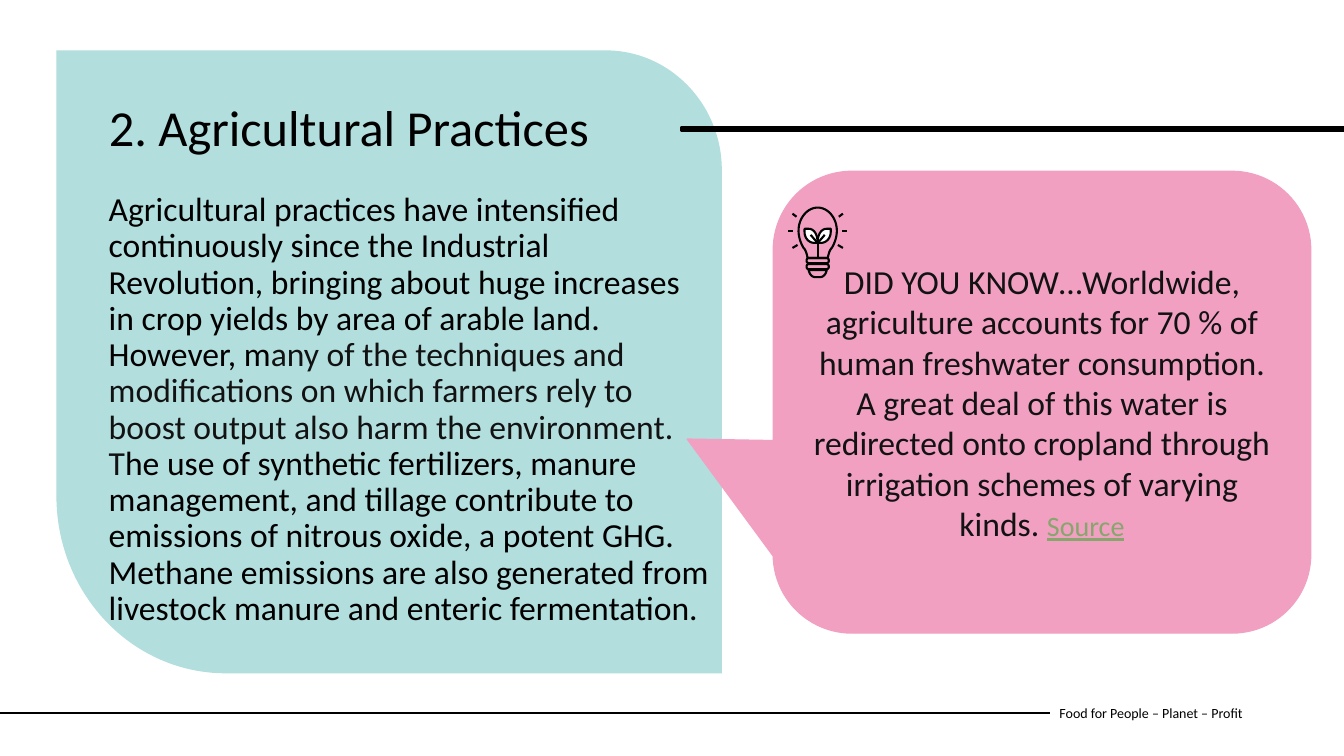
from pptx import Presentation
from pptx.dml.color import RGBColor
from pptx.enum.shapes import MSO_CONNECTOR, MSO_SHAPE
from pptx.enum.text import MSO_ANCHOR, MSO_AUTO_SIZE, PP_ALIGN
from pptx.oxml.ns import qn
from pptx.util import Inches, Pt
from lxml.etree import SubElement

BLACK = RGBColor(0x00, 0x00, 0x00)
INK = RGBColor(0x12, 0x12, 0x12)
WHITE = RGBColor(0xFF, 0xFF, 0xFF)
TEAL = RGBColor(0xB2, 0xDE, 0xDD)
PINK = RGBColor(0xF1, 0xA0, 0xC2)
GREEN = RGBColor(0x87, 0xA6, 0x6E)

BULB_AXIS = 8.11
STROKE = 1.5


def curve(start, first, second, end, steps=16):
    """Points along a cubic Bezier curve, both ends included."""
    points = []
    for step in range(steps + 1):
        t = step / steps
        weights = ((1 - t) ** 3, 3 * t * (1 - t) ** 2, 3 * t * t * (1 - t), t ** 3)
        corners = (start, first, second, end)
        points.append(tuple(sum(w * c[axis] for w, c in zip(weights, corners))
                            for axis in (0, 1)))
    return points


def mirror(points):
    """The points reflected in the bulb's axis, in reverse order."""
    return [(2 * BULB_AXIS - x, y) for x, y in reversed(points)]


class SlideBuilder:
    font = "Calibri"

    def __init__(self, deck):
        self.page = deck.slides.add_slide(deck.slide_layouts[5])

    def paint(self, shape, fill=None, line=None, width=1):
        shape.shadow.inherit = False
        if fill is None:
            shape.fill.background()
        else:
            shape.fill.solid()
            shape.fill.fore_color.rgb = fill
        if line is None:
            shape.line.fill.background()
        else:
            shape.line.color.rgb = line
            shape.line.width = Pt(width)
        return shape

    def set_text(self, shape, runs, frame_format=None, para_format=None):
        """Fill a shape with one paragraph of (text, size, colour, underline) runs."""
        frame = shape.text_frame
        para = frame.paragraphs[0]
        frame_values = {"word_wrap": True, "auto_size": MSO_AUTO_SIZE.NONE,
                        "vertical_anchor": MSO_ANCHOR.TOP, **(frame_format or {})}
        para_values = {"alignment": PP_ALIGN.LEFT, **(para_format or {})}
        for target, values in ((frame, frame_values), (para, para_values)):
            for name, value in values.items():
                setattr(target, name, value)
        for text, size, colour, underline in runs:
            span = para.add_run()
            span.text = text
            font_values = {"name": self.font, "size": Pt(size), "underline": underline}
            for name, value in font_values.items():
                setattr(span.font, name, value)
            span.font.color.rgb = colour

    def title(self, place, text, size):
        title = self.page.shapes.title
        title.left, title.top, title.width, title.height = map(Inches, place)
        self.page.shapes._spTree.append(title._element)
        self.set_text(title, [(text, size, BLACK, False)],
                      para_format={"line_spacing": 0.9})

    def text(self, place, runs, frame_format=None, para_format=None):
        box = self.page.shapes.add_textbox(*map(Inches, place))
        self.set_text(box, runs, frame_format, para_format)

    def shape(self, kind, place, adjustments=(), **style):
        shape = self.page.shapes.add_shape(kind, *map(Inches, place))
        for index, value in enumerate(adjustments):
            shape.adjustments[index] = value
        return self.paint(shape, **style)

    def outline(self, points, **style):
        corners = [(Inches(x), Inches(y)) for x, y in points]
        builder = self.page.shapes.build_freeform(*corners[0])
        builder.add_line_segments(corners[1:], close=True)
        return self.paint(builder.convert_to_shape(), **style)

    def line(self, start, end, width):
        line = self.page.shapes.add_connector(
            MSO_CONNECTOR.STRAIGHT, *map(Inches, (*start, *end)))
        line.line.color.rgb = BLACK
        line.line.width = Pt(width)
        SubElement(line._element.spPr, qn("a:effectLst"))


def draw_bulb(slide):
    glass = (curve((8.01, 2.56), (8, 2.51), (7.99, 2.48), (7.97, 2.46))
             + curve((7.97, 2.46), (7.94, 2.41), (7.92, 2.35), (7.92, 2.29))
             + curve((7.92, 2.29), (7.92, 2.16), (8.01, 2.06), (BULB_AXIS, 2.06)))
    slide.outline(glass + mirror(glass), line=BLACK, width=STROKE)

    foot = curve((8.02, 2.68), (8.03, 2.72), (8.05, 2.75), (8.09, 2.75))
    slide.outline(foot + mirror(foot), line=BLACK, width=STROKE)
    for top in (2.56, 2.62):
        slide.shape(MSO_SHAPE.ROUNDED_RECTANGLE, (8, top, 0.22, 0.05), [0.4],
                    line=BLACK, width=STROKE)

    slide.line((BULB_AXIS, 2.36), (BULB_AXIS, 2.56), STROKE)
    leaf = ([(7.98, 2.27), (8.02, 2.27)]
            + curve((8.02, 2.27), (8.07, 2.27), (8.11, 2.32), (8.11, 2.41))
            + curve((8.08, 2.41), (8.02, 2.41), (7.98, 2.36), (7.98, 2.3)))
    vein = [(8.04, 2.33), (8.1, 2.4)]
    rays = [[(7.82, 2.29), (7.87, 2.29)],
            [(7.86, 2.46), (7.91, 2.43)],
            [(7.86, 2.12), (7.9, 2.15)]]
    for side in (list, mirror):
        slide.outline(side(leaf), fill=WHITE, line=BLACK, width=STROKE)
        for stroke in [vein] + rays:
            slide.line(*side(stroke), STROKE)


def main():
    deck = Presentation()
    deck.slide_width, deck.slide_height = Inches(13.33), Inches(7.5)
    slide = SlideBuilder(deck)

    slide.text((10.41, 6.87, 2.73, 0.4),
               [("Food for People – Planet – Profit", 10, BLACK, False)],
               {"vertical_anchor": MSO_ANCHOR.MIDDLE})
    slide.line((0, 7.07), (10.41, 7.07), 1.5)

    card = ([(7.16, 6.68)]
            + curve((2.24, 6.68), (1.31, 6.68), (0.56, 5.89), (0.56, 4.92), 40)
            + [(0.56, 0.5)]
            + curve((6.01, 0.5), (6.64, 0.5), (7.16, 1.03), (7.16, 1.69), 40))
    slide.outline(card, fill=TEAL)
    slide.shape(MSO_SHAPE.RECTANGLE, (6.76, 1.26, 6.57, 0.04),
                fill=BLACK, line=BLACK, width=1.93)

    slide.text((0.98, 1.86, 6.18, 3.31), [
        ("Agricultural practices have intensified continuously since the Industrial "
         "Revolution, bringing about huge increases in crop yields by area of arable "
         "land. However, m", 24, BLACK, False),
        ("any of the techniques and modifications on which farmers rely to boost "
         "output also harm the environment. T", 24, INK, False),
        ("he use of synthetic fertilizers, manure management, and tillage contribute "
         "to emissions of nitrous oxide, a potent GHG. Methane emissions are also "
         "generated from livestock manure and enteric fermentation.", 24, BLACK, False),
    ], para_format={"line_spacing": 0.9})
    slide.title((0.98, 0.97, 5.46, 1.09), "2. Agricultural Practices", 36)

    callout = slide.shape(MSO_SHAPE.ROUNDED_RECTANGULAR_CALLOUT, (7.67, 1.7, 5.33, 4.58),
                          (-0.66, 0.08, 0.17), fill=PINK, line=PINK)
    slide.set_text(callout, [
        ("DID YOU KNOW…Worldwide, agriculture accounts for 70 % of human freshwater "
         "consumption. A great deal of this water is redirected onto cropland "
         "through irrigation schemes of varying kinds. ", 24, INK, False),
        ("Source", 20, GREEN, True),
    ], {"vertical_anchor": MSO_ANCHOR.MIDDLE}, {"alignment": PP_ALIGN.CENTER})
    draw_bulb(slide)

    deck.save("out.pptx")


if __name__ == "__main__":
    main()
